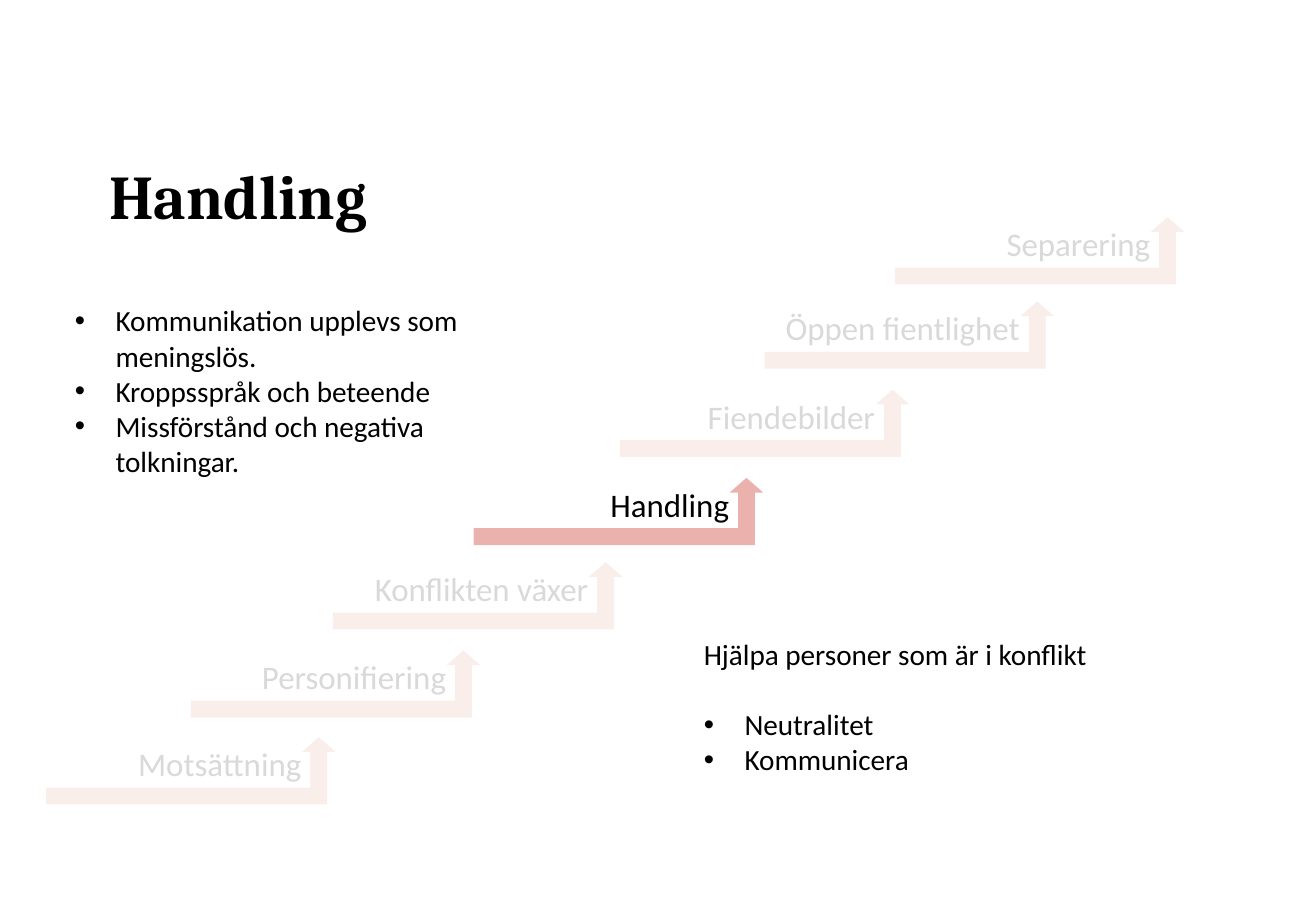
from dataclasses import dataclass

from lxml import etree
from pptx import Presentation
from pptx.dml.color import RGBColor
from pptx.enum.shapes import MSO_SHAPE
from pptx.enum.text import MSO_ANCHOR, MSO_AUTO_SIZE, PP_ALIGN
from pptx.oxml.ns import qn
from pptx.slide import Slide
from pptx.text.text import TextFrame, _Paragraph
from pptx.util import Inches, Pt

BENT_UP_ARROW = MSO_SHAPE.BENT_UP_ARROW
MIDDLE = MSO_ANCHOR.MIDDLE
FIT_TEXT = MSO_AUTO_SIZE.SHAPE_TO_FIT_TEXT
RIGHT = PP_ALIGN.RIGHT

BLACK = RGBColor(0x00, 0x00, 0x00)
FADED_TEXT = RGBColor(0xD9, 0xD9, 0xD9)
FADED_STEP = RGBColor(0xF9, 0xEE, 0xE9)
ACTIVE_STEP = RGBColor(0xEA, 0xB1, 0xAD)

ARROW_WIDTH, ARROW_HEIGHT = 2.2, 0.51
ARROW_ADJUSTMENTS = (0.25, 0.25, 0.218)
LABEL_WIDTH, LABEL_HEIGHT = 2.09, 0.4
LABEL_OFFSET = 0.15
BULLET_INDENT = 0.31


@dataclass(frozen=True)
class Step:
    name: str
    left: float
    top: float
    active: bool = False


@dataclass(frozen=True)
class Notes:
    left: float
    top: float
    width: float
    height: float
    bullets: tuple[str, ...]
    heading: str = ""


STEPS = (
    Step("Motsättning", 0.35, 5.6),
    Step("Personifiering", 1.45, 4.94),
    Step("Konflikten växer", 2.53, 4.27),
    Step("Handling", 3.6, 3.63, active=True),
    Step("Fiendebilder", 4.71, 2.96),
    Step("Öppen fientlighet", 5.81, 2.29),
    Step("Separering", 6.8, 1.65),
)

SIGNS = Notes(0.47, 2.25, 3.13, 1.45, (
    "Kommunikation upplevs som meningslös.",
    "Kroppsspråk och beteende",
    "Missförstånd och negativa tolkningar.",
))
SUPPORT = Notes(5.25, 4.78, 4.33, 1.18, ("Neutralitet", "Kommunicera"),
                heading="Hjälpa personer som är i konflikt")


def add_text_frame(slide: Slide, left: float, top: float,
                   width: float, height: float) -> TextFrame:
    box = slide.shapes.add_textbox(
        Inches(left), Inches(top), Inches(width), Inches(height))
    box.text_frame.word_wrap = True
    return box.text_frame


def set_font(paragraph: _Paragraph, size: float, color: RGBColor,
             name: str = "Calibri", bold: bool = False) -> None:
    font = paragraph.font
    font.name, font.size, font.bold = name, Pt(size), bold
    font.color.rgb = color


def add_bullet(paragraph: _Paragraph) -> None:
    properties = paragraph._p.get_or_add_pPr()
    properties.set("marL", str(Inches(BULLET_INDENT)))
    properties.set("indent", str(-Inches(BULLET_INDENT)))
    etree.SubElement(properties, qn("a:buFont")).set("typeface", "Arial")
    etree.SubElement(properties, qn("a:buChar")).set("char", "•")


def draw_title(slide: Slide, title: str) -> None:
    frame = add_text_frame(slide, 0.83, 0.84, 4.7, 1.35)
    frame.margin_left = frame.margin_right = 0
    frame.margin_top = frame.margin_bottom = 0
    frame.vertical_anchor = MIDDLE
    paragraph = frame.paragraphs[0]
    paragraph.text = title
    paragraph.line_spacing = 0.9
    set_font(paragraph, 34, BLACK, "Cambria", bold=True)


def draw_step(slide: Slide, step: Step) -> None:
    frame = add_text_frame(slide, step.left - LABEL_OFFSET, step.top,
                           LABEL_WIDTH, LABEL_HEIGHT)
    frame.auto_size = FIT_TEXT
    frame.margin_right = 0
    label = frame.paragraphs[0]
    label.text = step.name
    label.alignment = RIGHT
    set_font(label, 18, BLACK if step.active else FADED_TEXT)

    arrow = slide.shapes.add_shape(
        BENT_UP_ARROW, Inches(step.left), Inches(step.top),
        Inches(ARROW_WIDTH), Inches(ARROW_HEIGHT))
    for index, value in enumerate(ARROW_ADJUSTMENTS):
        arrow.adjustments[index] = value
    arrow.shadow.inherit = False
    arrow.fill.solid()
    arrow.fill.fore_color.rgb = ACTIVE_STEP if step.active else FADED_STEP
    arrow.line.fill.background()


def draw_notes(slide: Slide, notes: Notes) -> None:
    frame = add_text_frame(slide, notes.left, notes.top,
                           notes.width, notes.height)
    frame.auto_size = FIT_TEXT
    lines = ((notes.heading,) if notes.heading else ()) + notes.bullets
    for index, line in enumerate(lines):
        paragraph = frame.add_paragraph() if index else frame.paragraphs[0]
        paragraph.text = line
        if line == notes.heading:
            paragraph.space_after = Pt(19.5)
        else:
            add_bullet(paragraph)
        set_font(paragraph, 16, BLACK)


def main() -> None:
    presentation = Presentation()
    presentation.slide_width = Inches(10)
    presentation.slide_height = Inches(6.95)
    slide = presentation.slides.add_slide(presentation.slide_layouts[6])
    draw_title(slide, "Handling")
    for step in STEPS:
        draw_step(slide, step)
    for notes in (SIGNS, SUPPORT):
        draw_notes(slide, notes)
    presentation.save("out.pptx")


if __name__ == "__main__":
    main()
